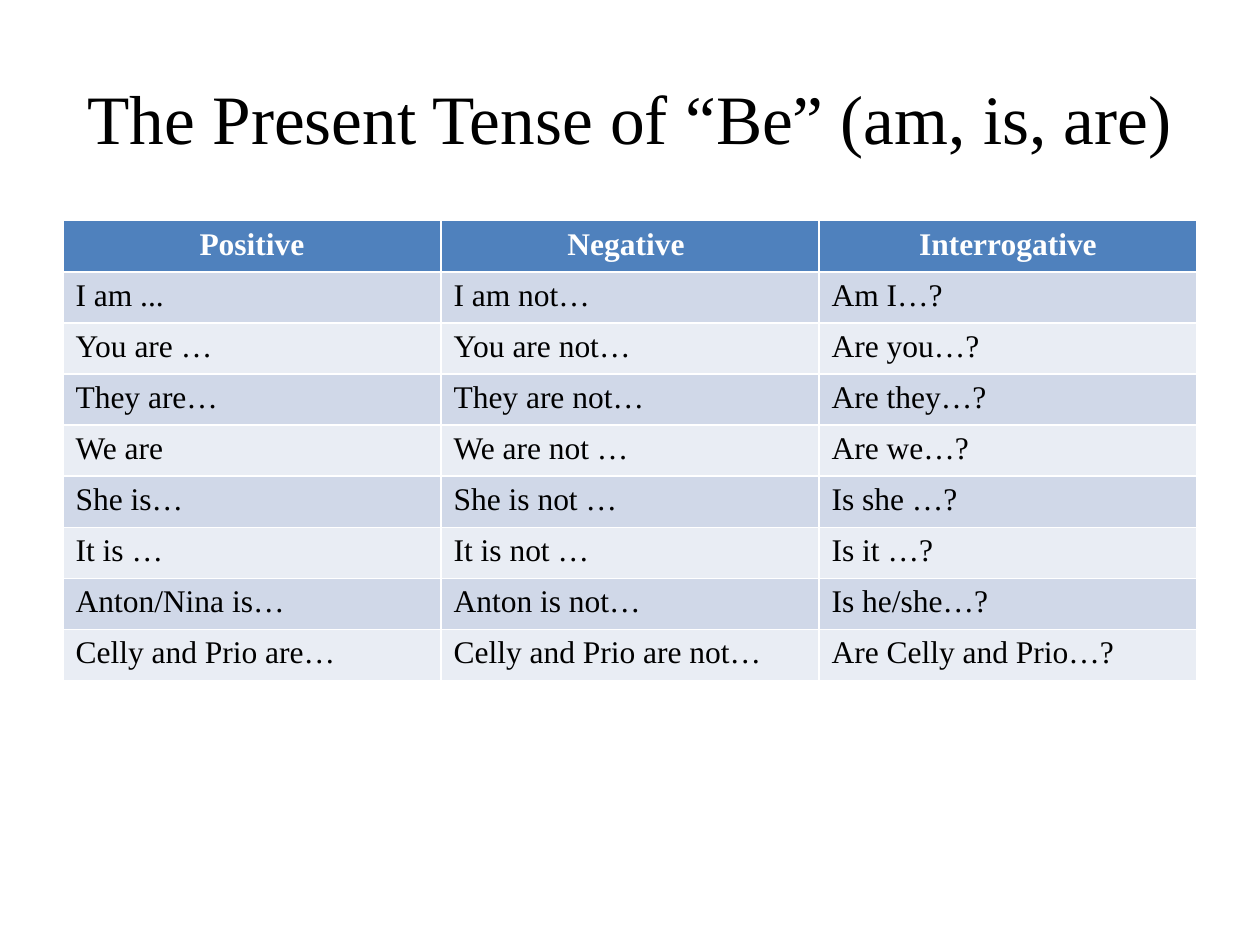
from pptx import Presentation
from pptx.dml.color import RGBColor
from pptx.enum.text import MSO_ANCHOR, PP_ALIGN
from pptx.util import Cm, Pt

# Content
TITLE = "The Present Tense of “Be” (am, is, are)"
ROWS = [
    ("Positive", "Negative ", "Interrogative"),
    ("I am ...", "I am not…", "Am I…?"),
    ("You are …", "You are not…", "Are you…?"),
    ("They are…", "They are not…", "Are they…?"),
    ("We are", "We are not …", "Are we…?"),
    ("She is…", "She is not …", "Is she …?"),
    ("It is …", "It is not …", "Is it …?"),
    ("Anton/Nina is…", "Anton is not…", "Is he/she…?"),
    ("Celly and Prio are…", "Celly and Prio are not…", "Are Celly and Prio…?"),
]

# Formats
COLORS = {"head": "4F81BD", "odd": "D0D8E8", "even": "E9EDF4",
          "white": "FFFFFF", "black": "000000"}
FACE = "Times New Roman"
FONTS = {
    "title": {"name": FACE, "size": Pt(39.6)},
    "head": {"name": FACE, "size": Pt(18), "bold": True},
    "body": {"name": FACE, "size": Pt(18), "bold": False},
}
LEFT, WIDTH = Cm(1.27), Cm(22.86)
ROW_H = Cm(1.03)


def color(name):
    return RGBColor.from_string(COLORS[name])


def write(frame, text, style, ink, align):
    para = frame.paragraphs[0]
    para.alignment = align
    run = para.add_run()
    run.text = text
    for key, value in FONTS[style].items():
        setattr(run.font, key, value)
    run.font.color.rgb = color(ink)


def main():
    deck = Presentation()
    deck.slide_width, deck.slide_height = Cm(25.4), Cm(19.05)
    slide = deck.slides.add_slide(deck.slide_layouts[5])

    # Title
    title = slide.shapes.title
    place = {"left": LEFT, "top": Cm(0.76), "width": WIDTH, "height": Cm(3.18)}
    for key, value in place.items():
        setattr(title, key, value)
    title.text_frame.vertical_anchor = MSO_ANCHOR.MIDDLE
    write(title.text_frame, TITLE, "title", "black", PP_ALIGN.CENTER)

    # Table of forms; the default style draws the white rules
    count = len(ROWS)
    table = slide.shapes.add_table(count, len(ROWS[0]), LEFT, Cm(4.45),
                                   WIDTH, ROW_H * count).table
    for r, texts in enumerate(ROWS):
        table.rows[r].height = ROW_H
        if r == 0:
            fill, look = "head", ("head", "white", PP_ALIGN.CENTER)
        else:
            fill = "odd" if r % 2 else "even"
            look = ("body", "black", PP_ALIGN.LEFT)
        for c, text in enumerate(texts):
            cell = table.cell(r, c)
            cell.fill.solid()
            cell.fill.fore_color.rgb = color(fill)
            write(cell.text_frame, text, *look)

    deck.save("out.pptx")


if __name__ == "__main__":
    main()
